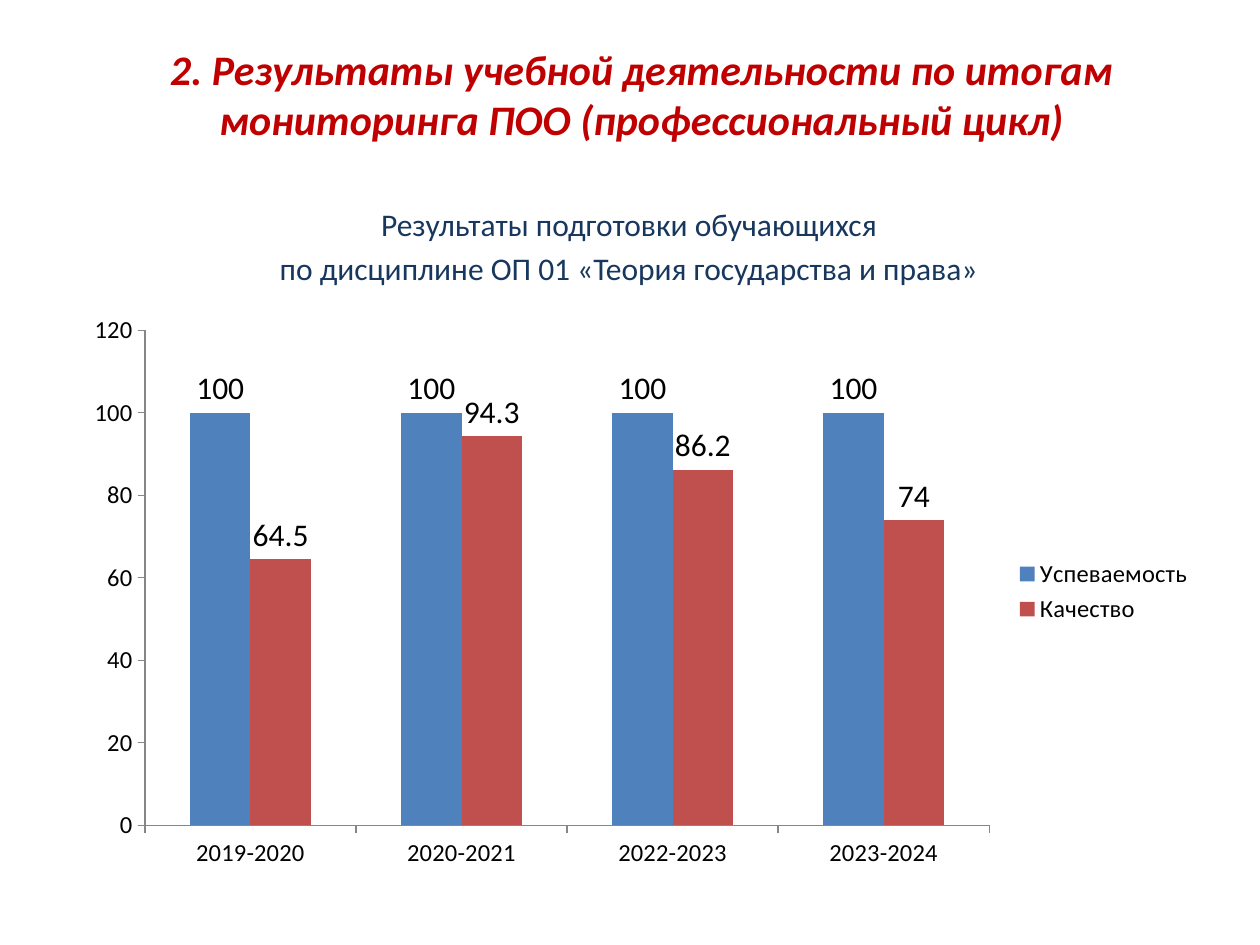
"""Build a slide with a clustered column chart of study results by year."""
from dataclasses import dataclass

from lxml import etree
from pptx import Presentation
from pptx import util as u
from pptx.chart import data as chart_data
from pptx.dml import color
from pptx.enum import chart as chart_enum, text
from pptx.oxml import ns


@dataclass(frozen=True)
class Theme:
    font: str = "Calibri"
    heading: str = "C00000"
    subtitle: str = "17375E"
    ink: str = "000000"
    axis: str = "868686"
    passed: str = "4F81BD"
    quality: str = "C0504D"
    heading_size: int = 24
    text_size: int = 18
    axis_size: int = 14


def apply(target, values):
    for name, value in values.items():
        setattr(target, name, value)


def style(font, size, ink, **values):
    apply(font, {"name": theme.font, "size": u.Pt(size), **values})
    font.color.rgb = color.RGBColor.from_string(ink)


theme = Theme()
deck = Presentation()
apply(deck, {"slide_width": u.Cm(25.4), "slide_height": u.Cm(19.05)})
page = deck.slides.add_slide(deck.slide_layouts[1])

heading = page.shapes.title
apply(heading, {"left": u.Cm(1.5), "top": u.Cm(0.3), "width": u.Cm(22.86), "height": u.Cm(3.18)})
apply(heading.text_frame, {
    "text": "2. Результаты учебной деятельности по итогам мониторинга ПОО (профессиональный цикл)",
    "vertical_anchor": text.MSO_ANCHOR.MIDDLE,
    "word_wrap": True,
})
para = heading.text_frame.paragraphs[0]
para.alignment = text.PP_ALIGN.CENTER
style(para.runs[0].font, theme.heading_size, theme.heading, bold=True, italic=True)

body = page.placeholders[1]
apply(body, {"left": u.Cm(1.25), "top": u.Cm(4.01), "width": u.Cm(22.86), "height": u.Cm(12.57)})
lines = ["Результаты подготовки обучающихся", "по дисциплине ОП 01 «Теория государства и права»"]
body.text_frame.text = "\n".join(lines)
for index, para in enumerate(body.text_frame.paragraphs):
    properties = para._p.get_or_add_pPr()
    etree.SubElement(properties, ns.qn("a:buNone"))
    apply(para, {"alignment": text.PP_ALIGN.CENTER, "space_before": u.Pt(3.6 if index else 0)})
    style(para.runs[0].font, theme.text_size, theme.subtitle)

results = chart_data.CategoryChartData()
results.categories = ["2019-2020", "2020-2021", "2022-2023", "2023-2024"]
results.add_series("Успеваемость", [100, 100, 100, 100])
results.add_series("Качество", [64.5, 94.3, 86.2, 74])
frame = page.shapes.add_chart(
    chart_enum.XL_CHART_TYPE.COLUMN_CLUSTERED,
    u.Cm(1.45), u.Cm(6.12), u.Cm(22.86), u.Cm(11.61), results,
)
heading.element.addprevious(frame.element)
chart = frame.chart
apply(chart, {"has_title": False, "has_legend": True})
style(chart.font, theme.text_size, theme.ink)
apply(chart.legend, {"position": chart_enum.XL_LEGEND_POSITION.RIGHT, "include_in_layout": False})
style(chart.legend.font, theme.axis_size, theme.ink)

for axis in (chart.category_axis, chart.value_axis):
    apply(axis, {
        "has_major_gridlines": False,
        "major_tick_mark": chart_enum.XL_TICK_MARK.OUTSIDE,
        "minor_tick_mark": chart_enum.XL_TICK_MARK.NONE,
    })
    style(axis.tick_labels.font, theme.axis_size, theme.ink)
    axis.format.line.color.rgb = color.RGBColor.from_string(theme.axis)
    axis.format.line.width = u.Pt(0.75)
apply(chart.value_axis, {"minimum_scale": 0, "maximum_scale": 120, "major_unit": 20})

plot = chart.plots[0]
apply(plot, {"gap_width": 150, "overlap": 0, "vary_by_categories": False})
for series, fill in zip(plot.series, (theme.passed, theme.quality)):
    series.format.fill.solid()
    series.format.fill.fore_color.rgb = color.RGBColor.from_string(fill)
    labels = series.data_labels
    apply(labels, {"show_value": True, "position": chart_enum.XL_LABEL_POSITION.OUTSIDE_END})
    style(labels.font, theme.text_size, theme.ink)

deck.save("out.pptx")
